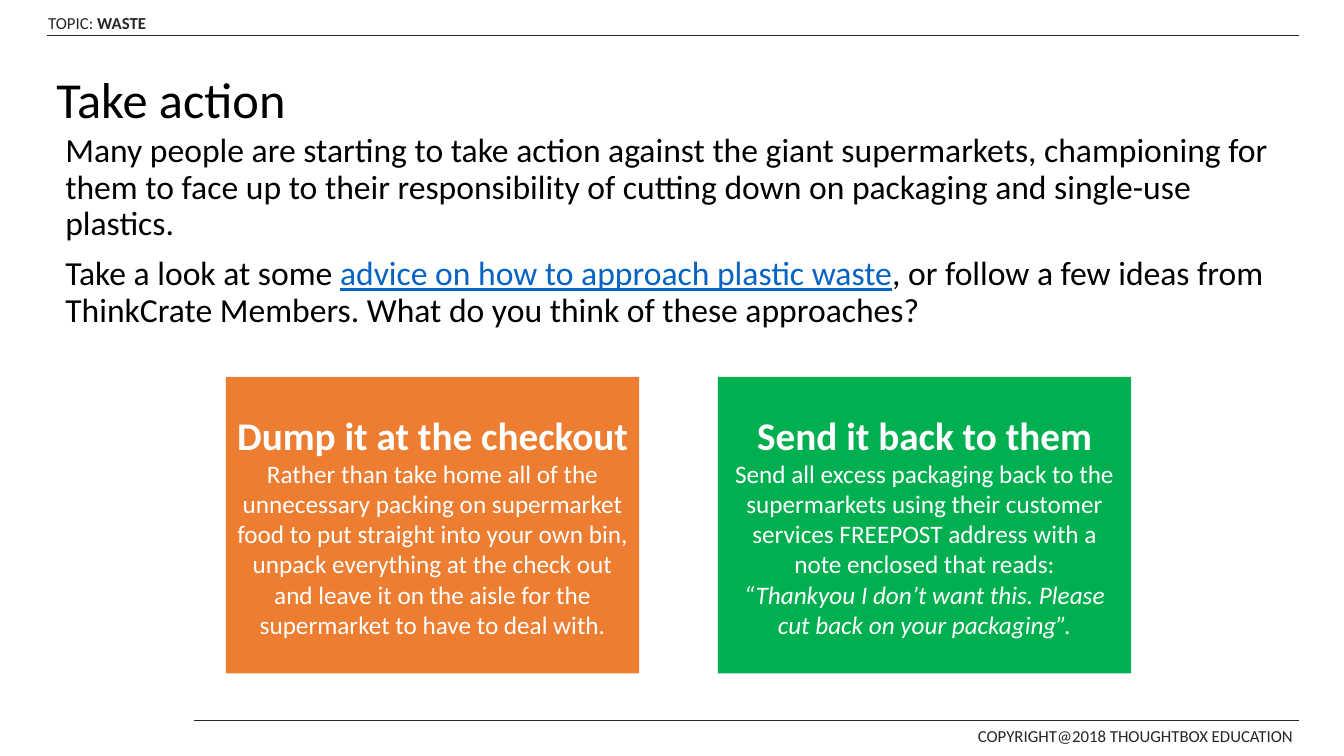
from dataclasses import dataclass

from lxml import etree
from pptx import Presentation
from pptx import util as u
from pptx.dml import color
from pptx.enum import shapes, text
from pptx.oxml import ns


@dataclass(frozen=True)
class Theme:
    font: str = "Calibri"
    ink: str = "000000"
    rule: str = "252823"
    link: str = "0563C1"
    light: str = "FFFFFF"
    orange: str = "ED7D31"
    green: str = "00B050"
    title: int = 36
    body: int = 24
    heading: int = 28
    card: int = 18
    small: int = 12


THEME = Theme()


def style(font, size, rgb, bold=False, italic=False):
    font.name = THEME.font
    font.size = u.Pt(size)
    font.color.rgb = color.RGBColor.from_string(rgb)
    font.bold = bold
    font.italic = italic


def add_text(page, box, wrap=True):
    frame = page.shapes.add_textbox(*map(u.Inches, box)).text_frame
    frame.word_wrap = wrap
    return frame


def add_rule(page, left, right, top):
    line = page.shapes.add_connector(
        shapes.MSO_CONNECTOR.STRAIGHT,
        u.Inches(left), u.Inches(top), u.Inches(right), u.Inches(top))
    line.line.color.rgb = color.RGBColor.from_string(THEME.rule)
    line.line.width = u.Pt(1)
    etree.SubElement(line._element.spPr, ns.qn("a:effectLst"))


def add_header(page, left, top, right):
    para = add_text(page, (left - 0.09, top - 0.27, 1.23, 0.3), wrap=False).paragraphs[0]
    para.add_run().text = "TOPIC: "
    topic = para.add_run()
    topic.text = "WASTE"
    topic.font.bold = True
    para.font.name = THEME.font
    para.font.size = u.Pt(THEME.small)
    para.font.color.rgb = color.RGBColor.from_string(THEME.rule)
    add_rule(page, left, right, top)


def add_footer(page, left, top, right):
    para = add_text(page, (right - 3.28, top, 3.4, 0.31)).paragraphs[0]
    para.text = "COPYRIGHT@2018 THOUGHTBOX EDUCATION"
    style(para.font, THEME.small, THEME.rule)
    add_rule(page, left, right, top)


def add_title(page, box, words):
    title = page.shapes.title
    title.left, title.top, title.width, title.height = map(u.Inches, box)
    title.text_frame.vertical_anchor = text.MSO_ANCHOR.MIDDLE
    para = title.text_frame.paragraphs[0]
    para.text = words
    para.alignment = text.PP_ALIGN.LEFT
    para.line_spacing = 0.9
    style(para.font, THEME.title, THEME.ink)


def add_body(page, box):
    frame = add_text(page, box)
    intro = frame.paragraphs[0]
    intro.text = (
        "Many people are starting to take action against the giant supermarkets, "
        "championing for them to face up to their responsibility of cutting down "
        "on packaging and single-use plastics.")
    advice = frame.add_paragraph()
    advice.space_before = u.Pt(10)
    advice.add_run().text = "Take a look at some "
    span = advice.add_run()
    span.text = "advice on how to approach plastic waste"
    span.font.underline = True
    span.font.color.rgb = color.RGBColor.from_string(THEME.link)
    advice.add_run().text = (
        ", or follow a few ideas from ThinkCrate Members. "
        "What do you think of these approaches?")
    for para in frame.paragraphs:
        para.line_spacing = 0.9
        style(para.font, THEME.body, THEME.ink)


def add_card(page, box, fill, heading, detail, quote=None):
    card = page.shapes.add_shape(shapes.MSO_SHAPE.RECTANGLE, *map(u.Inches, box))
    card.shadow.inherit = False
    card.fill.solid()
    card.fill.fore_color.rgb = color.RGBColor.from_string(fill)
    card.line.fill.background()
    frame = card.text_frame
    frame.word_wrap = True
    frame.vertical_anchor = text.MSO_ANCHOR.MIDDLE
    frame.text = "\n".join(filter(None, (heading, detail, quote)))
    for index, para in enumerate(frame.paragraphs):
        para.alignment = text.PP_ALIGN.CENTER
        size = THEME.card if index else THEME.heading
        style(para.font, size, THEME.light, bold=index == 0, italic=index == 2)


def add_cards(page, box):
    left, top, width, height = box
    card_width = 4.1
    cards = (
        (THEME.orange, "Dump it at the checkout",
         "Rather than take home all of the unnecessary packing on supermarket food "
         "to put straight into your own bin, unpack everything at the check out and "
         "leave it on the aisle for the supermarket to have to deal with."),
        (THEME.green, "Send it back to them",
         "Send all excess packaging back to the supermarkets using their customer "
         "services FREEPOST address with a note enclosed that reads:",
         "“Thankyou I don’t want this. Please cut back on your packaging”."),
    )
    step = (width - card_width) / (len(cards) - 1)
    for index, card in enumerate(cards):
        add_card(page, (left + index * step, top, card_width, height), *card)


def main():
    deck = Presentation()
    deck.slide_width, deck.slide_height = u.Inches(13.33), u.Inches(7.5)
    page = deck.slides.add_slide(deck.slide_layouts.get_by_name("Title Only"))
    add_header(page, 0.47, 0.35, 12.88)
    add_footer(page, 1.92, 7.15, 12.88)
    add_title(page, (0.46, 0.36, 12.42, 1.3), "Take action")
    add_body(page, (0.55, 1.28, 12.4, 2.2))
    add_cards(page, (2.24, 3.74, 8.98, 2.94))
    deck.save("out.pptx")


if __name__ == "__main__":
    main()
